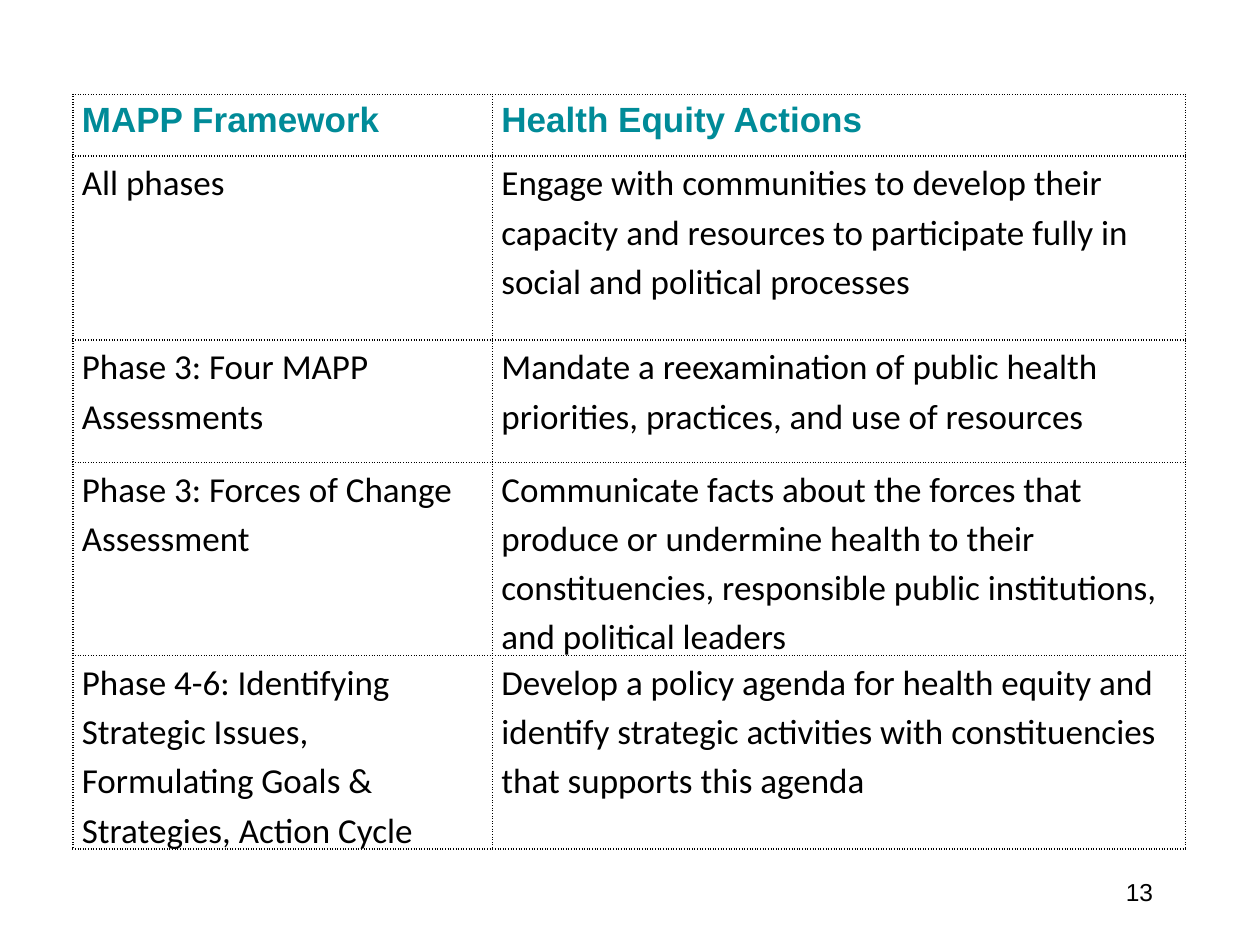
from lxml.etree import SubElement
from pptx import Presentation
from pptx.dml.color import RGBColor
from pptx.enum.text import MSO_ANCHOR, PP_ALIGN
from pptx.oxml.ns import qn
from pptx.util import Inches, Pt

COLORS = {"heading": "008B98", "text": "000000", "border": "000000"}
HEADINGS = ("MAPP Framework", "Health Equity Actions")
ACTIONS = [
    ("All phases",
     "Engage with communities to develop their capacity and resources "
     "to participate fully in social and political processes"),
    ("Phase 3: Four MAPP Assessments",
     "Mandate a reexamination of public health priorities, practices, "
     "and use of resources"),
    ("Phase 3: Forces of Change Assessment",
     "Communicate facts about the forces that produce or undermine health to "
     "their constituencies, responsible public institutions, and political leaders"),
    ("Phase 4-6: Identifying Strategic Issues, Formulating Goals & Strategies, "
     "Action Cycle",
     "Develop a policy agenda for health equity and identify strategic activities "
     "with constituencies that supports this agenda"),
]
PAGE_NUMBER = "13"
COLUMN_WIDTHS = (3.33, 5.5)
ROW_HEIGHTS = (0.49, 1.46, 0.97, 1.46, 1.46)


def format_font(font, name, size, color, bold=False):
    font.name = name
    font.size = Pt(size)
    font.bold = bold
    font.color.rgb = RGBColor.from_string(color)


def add_dotted_borders(cell):
    properties = cell._tc.get_or_add_tcPr()
    for position, side in enumerate(("lnL", "lnR", "lnT", "lnB")):
        line = SubElement(properties, qn(f"a:{side}"), w=str(Pt(1)))
        fill = SubElement(line, qn("a:solidFill"))
        SubElement(fill, qn("a:srgbClr"), val=COLORS["border"])
        SubElement(line, qn("a:prstDash"), val="sysDot")
        properties.insert(position, line)  # borders must precede the cell fill


def fill_cell(cell, text, is_heading):
    cell.margin_left = cell.margin_right = Inches(0.07)
    cell.margin_top = cell.margin_bottom = 0
    cell.vertical_anchor = MSO_ANCHOR.TOP
    cell.fill.background()
    add_dotted_borders(cell)
    cell.text_frame.text = text
    paragraph = cell.text_frame.paragraphs[0]
    paragraph.line_spacing = 1.15
    font = paragraph.runs[0].font
    if is_heading:
        paragraph.space_before = Pt(10)
        format_font(font, "Arial", 20, COLORS["heading"], bold=True)
    else:
        format_font(font, "Calibri", 20, COLORS["text"])


def add_actions_table(slide):
    rows = [HEADINGS, *ACTIONS]
    table = slide.shapes.add_table(
        len(rows), len(HEADINGS), Inches(0.58), Inches(0.75),
        Inches(sum(COLUMN_WIDTHS)), Inches(sum(ROW_HEIGHTS))).table
    table.horz_banding = False
    for column, width in zip(table.columns, COLUMN_WIDTHS):
        column.width = Inches(width)
    for row, height in zip(table.rows, ROW_HEIGHTS):
        row.height = Inches(height)
    for row_index, texts in enumerate(rows):
        for column_index, text in enumerate(texts):
            fill_cell(table.cell(row_index, column_index), text, row_index == 0)


def add_page_number(slide):
    box = slide.shapes.add_textbox(
        Inches(7.17), Inches(6.83), Inches(2.08), Inches(0.5))
    frame = box.text_frame
    frame.word_wrap = True
    frame.vertical_anchor = MSO_ANCHOR.MIDDLE
    frame.text = PAGE_NUMBER
    paragraph = frame.paragraphs[0]
    paragraph.alignment = PP_ALIGN.RIGHT
    format_font(paragraph.runs[0].font, "Arial", 14, COLORS["text"])


def main():
    presentation = Presentation()
    presentation.slide_width = Inches(10)
    presentation.slide_height = Inches(7.5)
    slide = presentation.slides.add_slide(presentation.slide_layouts[6])
    add_page_number(slide)
    add_actions_table(slide)
    presentation.save("out.pptx")


if __name__ == "__main__":
    main()
